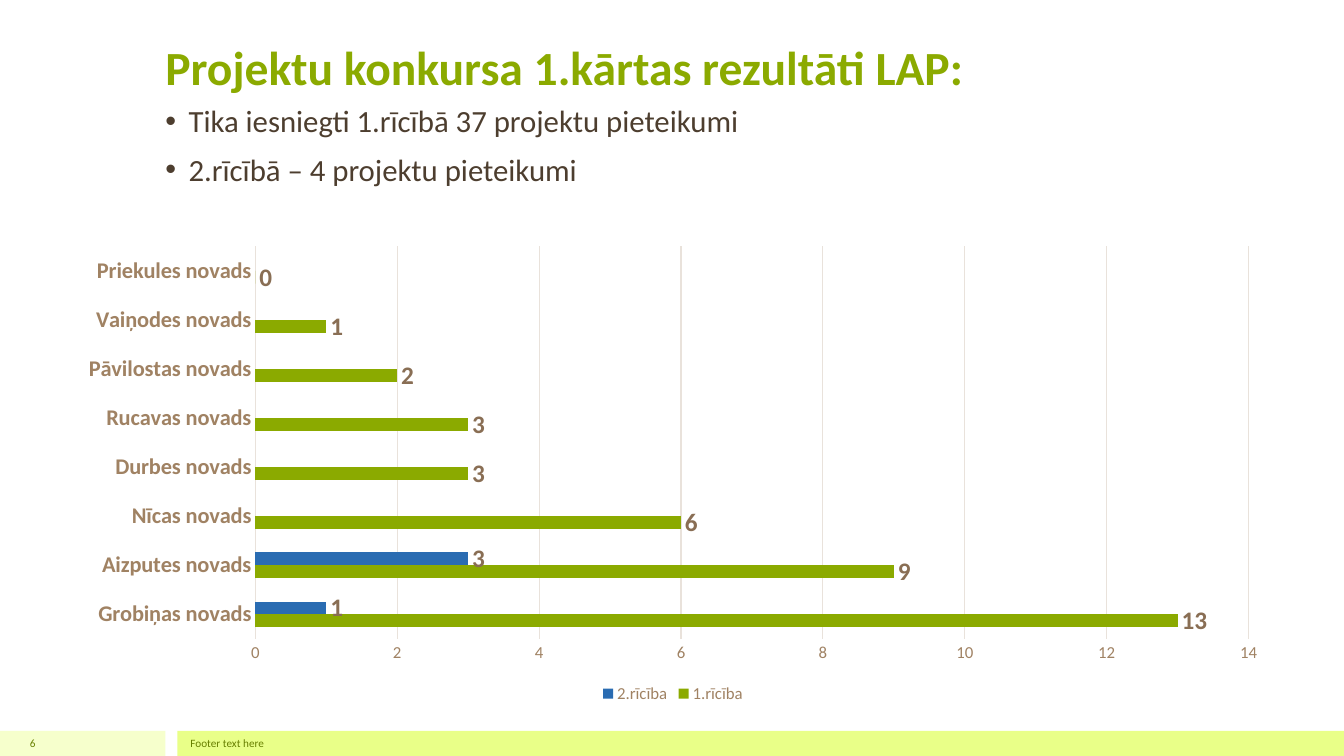
import pptx
import pptx.chart.data
import pptx.dml.color
import pptx.enum.chart
import pptx.enum.shapes
import pptx.enum.text
import pptx.oxml
import pptx.oxml.ns
import pptx.util

Inches = pptx.util.Inches
Pt = pptx.util.Pt
ALIGN = pptx.enum.text.PP_ALIGN
ANCHOR = pptx.enum.text.MSO_ANCHOR

FONT = "Calibri"
COLORS = {
    "green": "8BAA00", "blue": "2A6CB2", "body": "4D3E2F",
    "axis": "A08263", "label": "896E54", "grid": "E9E2DB",
    "pale": "F6FFCC", "lime": "E9FF88", "footer": "688000",
}
DISTRICTS = ["Grobiņas novads", "Aizputes novads", "Nīcas novads", "Durbes novads",
             "Rucavas novads", "Pāvilostas novads", "Vaiņodes novads", "Priekules novads"]
SERIES = [("1.rīcība", [13, 9, 6, 3, 3, 2, 1, 0], "green"),
          ("2.rīcība", [1, 3] + [None] * 6, "blue")]


def color(name):
    return pptx.dml.color.RGBColor.from_string(COLORS[name])


def style_font(font, size, color_name, bold=False):
    font.name = FONT
    font.size = Pt(size)
    font.bold = bold
    font.color.rgb = color(color_name)


def place(shape, box):
    shape.left, shape.top, shape.width, shape.height = map(Inches, box)


def add_title(slide, box, text):
    title = slide.shapes.title
    place(title, box)
    frame = title.text_frame
    frame.text = text
    frame.auto_size = pptx.enum.text.MSO_AUTO_SIZE.NONE
    frame.vertical_anchor = ANCHOR.BOTTOM
    paragraph = frame.paragraphs[0]
    paragraph.alignment = ALIGN.LEFT
    paragraph.line_spacing = 0.9
    style_font(paragraph.runs[0].font, 34, "green", bold=True)


def add_bullets(slide, box, lines):
    body = slide.placeholders[1]
    place(body, box)
    frame = body.text_frame
    frame.text = "\n".join(lines)
    frame.auto_size = pptx.enum.text.MSO_AUTO_SIZE.NONE
    for paragraph in frame.paragraphs:
        paragraph.line_spacing = 0.9
        paragraph.space_before = Pt(11)
        style_font(paragraph.runs[0].font, 22, "body")
        properties = paragraph._p.get_or_add_pPr()
        properties.set("marL", str(Inches(0.23)))
        properties.set("indent", str(-Inches(0.23)))
        bullet = pptx.oxml.parse_xml(
            f'<a:buChar {pptx.oxml.ns.nsdecls("a")} char="•"/>')
        properties.append(bullet)


def add_footer(slide, box):
    left, top, width, height = box
    number_width, gap = 1.64, 0.12
    bar_left = left + number_width + gap

    # Bands
    for x, band_width, fill in ((left, number_width, "pale"),
                                (bar_left, width - number_width - gap, "lime")):
        band = slide.shapes.add_shape(
            pptx.enum.shapes.MSO_SHAPE.RECTANGLE,
            *map(Inches, (x, top, band_width, height)))
        band.shadow.inherit = False
        band.fill.solid()
        band.fill.fore_color.rgb = color(fill)
        band.line.fill.background()

    # Footer text and slide number
    for x, text_width, text, alignment in ((bar_left + 0.03, 10, "Footer text here", ALIGN.LEFT),
                                           (left, 0.45, "6", ALIGN.RIGHT)):
        frame = slide.shapes.add_textbox(
            *map(Inches, (x, top, text_width, height))).text_frame
        frame.word_wrap = True
        frame.vertical_anchor = ANCHOR.MIDDLE
        frame.text = text
        paragraph = frame.paragraphs[0]
        paragraph.alignment = alignment
        style_font(paragraph.runs[0].font, 8, "footer")


def add_results_chart(slide, box):
    data = pptx.chart.data.CategoryChartData()
    data.categories = DISTRICTS
    for name, values, _ in SERIES:
        data.add_series(name, values)
    chart = slide.shapes.add_chart(
        pptx.enum.chart.XL_CHART_TYPE.BAR_CLUSTERED, *map(Inches, box), data).chart
    style_font(chart.font, 10, "body")
    chart.has_title = False

    # Legend
    chart.has_legend = True
    chart.legend.position = pptx.enum.chart.XL_LEGEND_POSITION.BOTTOM
    chart.legend.include_in_layout = False
    style_font(chart.legend.font, 12, "axis")

    # Axes
    category_axis, value_axis = chart.category_axis, chart.value_axis
    for axis, size, bold in ((category_axis, 16, True), (value_axis, 12, False)):
        axis.major_tick_mark = pptx.enum.chart.XL_TICK_MARK.NONE
        axis.minor_tick_mark = pptx.enum.chart.XL_TICK_MARK.NONE
        style_font(axis.tick_labels.font, size, "axis", bold)
    value_axis.has_major_gridlines = True
    value_axis.format.line.fill.background()
    for line in (category_axis.format.line, value_axis.major_gridlines.format.line):
        line.color.rgb = color("grid")
        line.width = Pt(0.75)

    # Bars and value labels
    plot = chart.plots[0]
    plot.gap_width = 182
    plot.vary_by_categories = False
    for series, (_, _, fill) in zip(plot.series, SERIES):
        series.invert_if_negative = False
        series.format.fill.solid()
        series.format.fill.fore_color.rgb = color(fill)
        labels = series.data_labels
        labels.show_value = True
        labels.position = pptx.enum.chart.XL_LABEL_POSITION.OUTSIDE_END
        style_font(labels.font, 18, "label", bold=True)


def main():
    presentation = pptx.Presentation()
    presentation.slide_width = Inches(13.33)
    presentation.slide_height = Inches(7.5)
    slide = presentation.slides.add_slide(presentation.slide_layouts[1])
    add_footer(slide, (0, 7.25, 13.33, 0.25))
    add_title(slide, (1.54, 0.07, 10.25, 0.93), "Projektu konkursa 1.kārtas rezultāti LAP:")
    add_bullets(slide, (1.54, 1, 10.25, 1.12),
                ["Tika iesniegti 1.rīcībā 37 projektu pieteikumi",
                 "2.rīcībā – 4 projektu pieteikumi"])
    add_results_chart(slide, (0.64, 2.35, 12.07, 4.67))
    presentation.save("out.pptx")


if __name__ == "__main__":
    main()
